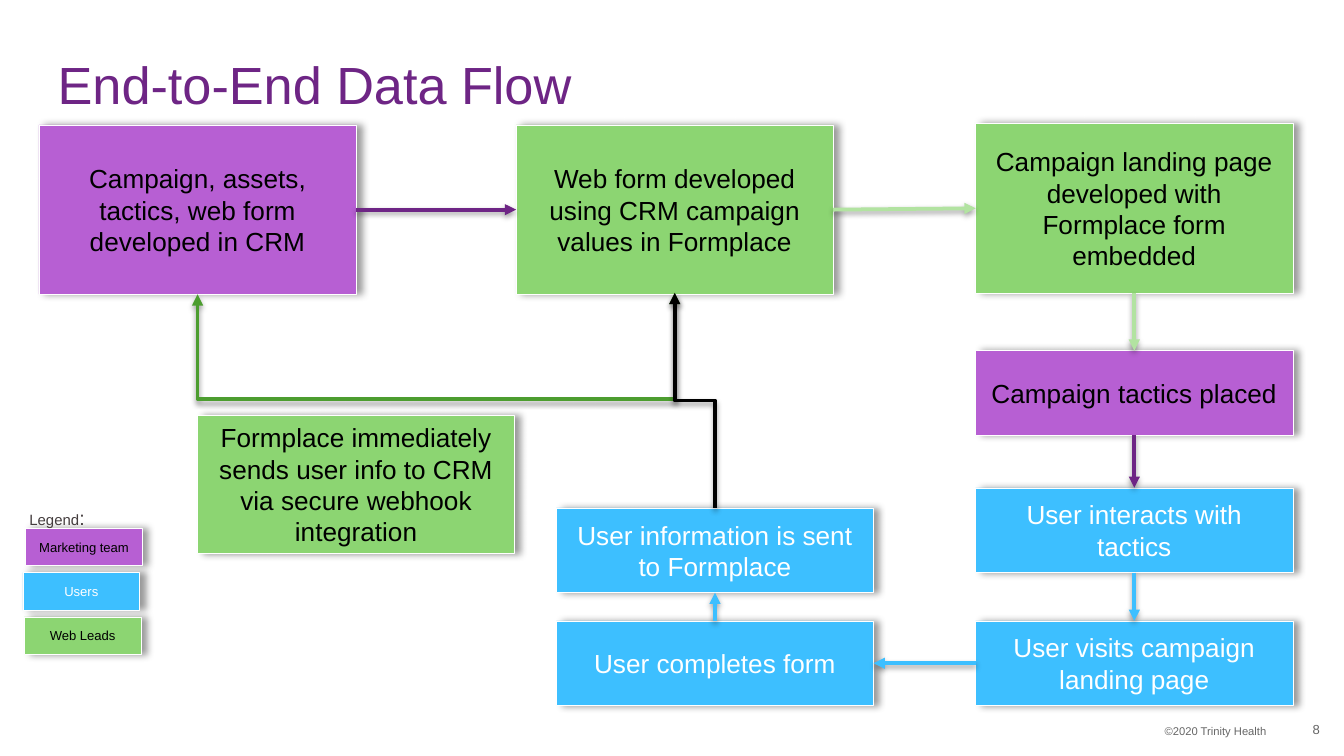
from lxml import etree
from pptx import Presentation
from pptx import util as u
from pptx.dml.color import RGBColor
from pptx.enum import shapes, text
from pptx.oxml import ns

THEME = {
    "font": "Arial",
    "colors": {
        "purple": "B75FD3", "green": "8CD572", "blue": "3DBFFF",
        "title": "6E2585", "pale": "B2E3A1", "leaf": "4C9D2F",
        "black": "000000", "white": "FFFFFF", "gray": "666666", "charcoal": "443D3E",
    },
    "sizes": {"title": 28, "box": 14, "colon": 10.5, "legend": 8, "small": 7, "footer": 6},
    "box_shadow": {"alpha": 40, "blur": 4, "distance": 3, "angle": 0},
    "arrow_shadow": {"alpha": 38, "blur": 3.1, "distance": 1.6, "angle": 90},
}
BOX_WIDTH, TALL, SHORT = 2.36, 1.26, 0.63
RIGHT, MIDDLE = 7.26, 4.14

STEPS = {
    "setup": (0.29, 0.93, TALL, "purple", "Campaign, assets, tactics, web form developed in CRM"),
    "form": (3.84, 0.93, TALL, "green", "Web form developed using CRM campaign values in Formplace"),
    "landing": (RIGHT, 0.92, TALL, "green",
                "Campaign landing page developed with Formplace form embedded"),
    "placed": (RIGHT, 2.61, SHORT, "purple", "Campaign tactics placed"),
    "interacts": (RIGHT, 3.63, SHORT, "blue", "User interacts with tactics"),
    "visits": (RIGHT, 4.62, SHORT, "blue", "User visits campaign landing page"),
    "completes": (MIDDLE, 4.62, SHORT, "blue", "User completes form"),
    "sent": (MIDDLE, 3.78, SHORT, "blue", "User information is sent to Formplace"),
    "webhook": (1.47, 3.09, 1.03, "green",
                "Formplace immediately sends user info to CRM via secure webhook integration"),
}
ARROWS = [
    ("placed", "bottom", "interacts", "top", "title"),
    ("interacts", "bottom", "visits", "top", "blue"),
    ("visits", "left", "completes", "right", "blue"),
    ("setup", "right", "form", "left", "title"),
    ("form", "right", "landing", "left", "pale"),
    ("landing", "bottom", "placed", "top", "pale"),
    ("completes", "top", "sent", "bottom", "blue"),
]
ELBOWS = [
    ((5.02, 2.18), (1.47, 2.19), "leaf", ("headEnd", "tailEnd")),
    ((5.32, 3.78), (5.02, 2.18), "black", ("tailEnd",)),
]
ELBOW_LEVEL = 2.98
LEGEND = [(0.19, "purple", "Marketing team"), (0.17, "blue", "Users"), (0.18, "green", "Web Leads")]
LEGEND_TOP, LEGEND_STEP = 3.93, 0.33
SIDES = {"left": (0, 0.5), "right": (1, 0.5), "top": (0.5, 0), "bottom": (0.5, 1)}


def color(name):
    return RGBColor.from_string(THEME["colors"][name])


def add_shadow(shape, alpha, blur, distance, angle):
    effects = etree.SubElement(shape._element.spPr, ns.qn("a:effectLst"))
    shadow = etree.SubElement(
        effects, ns.qn("a:outerShdw"), blurRad=str(u.Pt(blur)), dist=str(u.Pt(distance)),
        dir=str(angle * 60000), algn="ctr", rotWithShape="0")
    black = etree.SubElement(shadow, ns.qn("a:srgbClr"), val=THEME["colors"]["black"])
    etree.SubElement(black, ns.qn("a:alpha"), val=str(alpha * 1000))


def write(shape, runs, align, anchor):
    frame = shape.text_frame
    frame.word_wrap = True
    frame.vertical_anchor = anchor
    paragraph = frame.paragraphs[0]
    paragraph.alignment = align
    for words, size, tint in runs:
        run = paragraph.add_run()
        run.text = words
        run.font.name = THEME["font"]
        run.font.size = u.Pt(THEME["sizes"][size])
        run.font.color.rgb = color(tint)
    return frame, paragraph


def add_text(slide, place, runs, align=text.PP_ALIGN.LEFT, anchor=text.MSO_ANCHOR.TOP):
    return write(slide.shapes.add_textbox(*map(u.Inches, place)), runs, align, anchor)


def add_box(slide, place, fill, words, size):
    shape = slide.shapes.add_shape(shapes.MSO_SHAPE.RECTANGLE, *map(u.Inches, place))
    shape.fill.solid()
    shape.fill.fore_color.rgb = color(fill)
    shape.line.color.rgb = color("white")
    shape.line.width = u.Pt(0.25)
    add_shadow(shape, **THEME["box_shadow"])
    tint = "white" if fill == "blue" else "black"
    write(shape, [(words, size, tint)], text.PP_ALIGN.CENTER, text.MSO_ANCHOR.MIDDLE)


def add_arrow(slide, kind, start, end, tint, heads=("tailEnd",)):
    connector = slide.shapes.add_connector(kind, *map(u.Inches, (*start, *end)))
    connector.line.color.rgb = color(tint)
    connector.line.width = u.Pt(2)
    line = connector.line._get_or_add_ln()
    for head in heads:
        etree.SubElement(line, ns.qn(f"a:{head}"), type="triangle")
    add_shadow(connector, **THEME["arrow_shadow"])
    return connector


def add_elbow(slide, start, end, tint, heads):
    (x1, y1), (x2, y2) = start, end
    center_x, center_y = (x1 + x2) / 2, (y1 + y2) / 2
    sign = 1 if y2 > y1 else -1
    half_x, half_y = sign * (y2 - y1) / 2, -sign * (x2 - x1) / 2
    connector = add_arrow(
        slide, shapes.MSO_CONNECTOR.ELBOW, (center_x - half_x, center_y - half_y),
        (center_x + half_x, center_y + half_y), tint, heads)
    properties = connector._element.spPr
    properties.find(ns.qn("a:xfrm")).set("rot", str((90 if sign > 0 else 270) * 60000))
    geometry = properties.find(ns.qn("a:prstGeom"))
    adjustments = geometry.find(ns.qn("a:avLst"))
    if adjustments is None:
        adjustments = etree.SubElement(geometry, ns.qn("a:avLst"))
    bend = round((ELBOW_LEVEL - y1) / (y2 - y1) * 100000)
    etree.SubElement(adjustments, ns.qn("a:gd"), name="adj1", fmla=f"val {bend}")


def site(step, side):
    left, top, height = STEPS[step][:3]
    across, down = SIDES[side]
    return left + across * BOX_WIDTH, top + down * height


def main():
    """Build the end-to-end data flow slide."""
    presentation = Presentation()
    presentation.slide_width = u.Inches(10)
    presentation.slide_height = u.Inches(10 * 9 / 16)
    slide = presentation.slides.add_slide(presentation.slide_layouts[6])

    frame, paragraph = add_text(slide, (0.43, 0.38, 9, 0.55),
                                [("End-to-End Data Flow", "title", "title")],
                                anchor=text.MSO_ANCHOR.MIDDLE)
    frame.margin_left = frame.margin_right = frame.margin_top = frame.margin_bottom = 0
    paragraph.line_spacing = 0.9
    add_text(slide, (5.33, 5.34, 4.19, 0.2), [("©2020 Trinity Health", "footer", "gray")],
             text.PP_ALIGN.RIGHT)
    frame, paragraph = add_text(slide, (9.38, 5.28, 0.44, 0.3), [("8", "small", "gray")],
                                text.PP_ALIGN.RIGHT, text.MSO_ANCHOR.MIDDLE)
    frame.margin_right = 0

    for left, top, height, fill, words in STEPS.values():
        add_box(slide, (left, top, BOX_WIDTH, height), fill, words, "box")
    for source, source_side, target, target_side, tint in ARROWS:
        add_arrow(slide, shapes.MSO_CONNECTOR.STRAIGHT, site(source, source_side),
                  site(target, target_side), tint)
    for elbow in ELBOWS:
        add_elbow(slide, *elbow)

    for index, (left, fill, words) in enumerate(LEGEND):
        add_box(slide, (left, LEGEND_TOP + index * LEGEND_STEP, 0.87, 0.28), fill, words, "small")
    frame, paragraph = add_text(slide, (0.12, 3.6, 0.93, 0.37),
                                [("Legend", "legend", "charcoal"), (":", "colon", "charcoal")])
    paragraph.line_spacing = u.Pt(21)
    paragraph.space_after = u.Pt(6)

    presentation.save("out.pptx")


if __name__ == "__main__":
    main()
